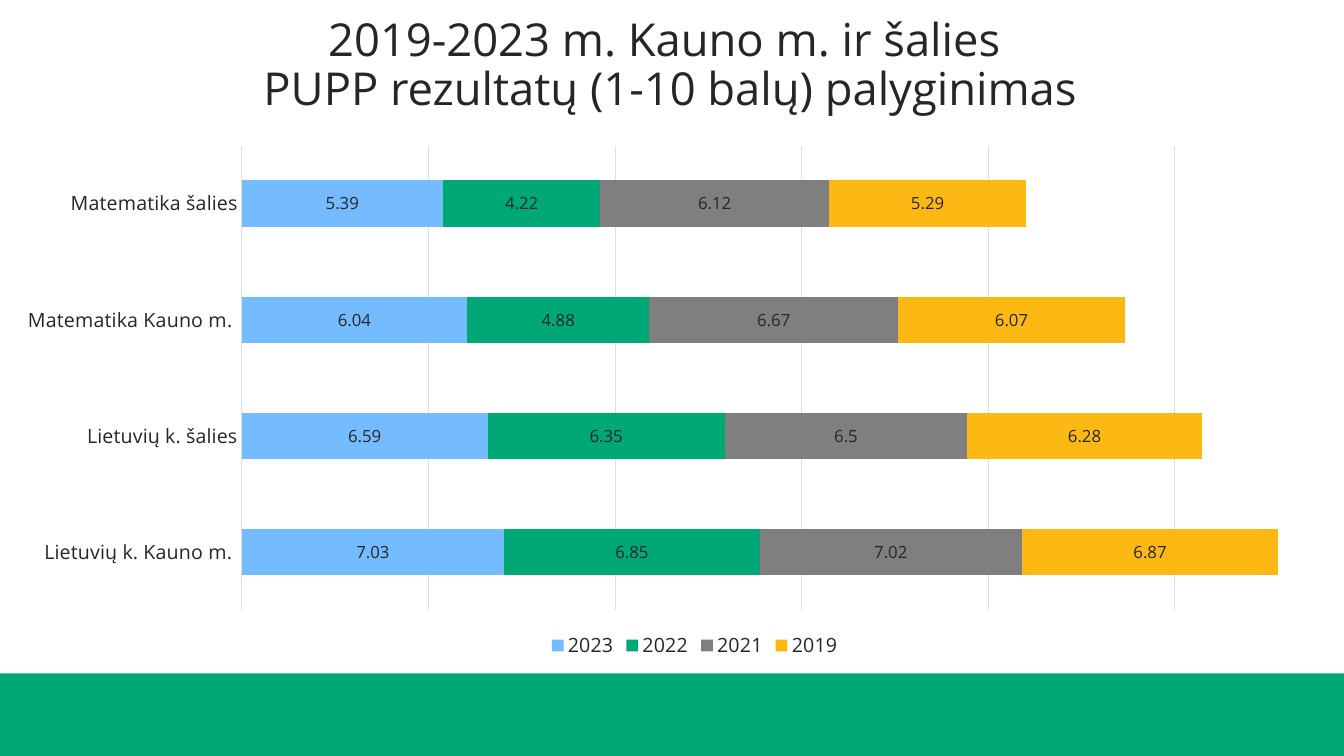
from pptx import Presentation
from pptx.chart.data import CategoryChartData
from pptx.dml.color import RGBColor
from pptx.enum.chart import XL_CHART_TYPE, XL_LABEL_POSITION, XL_LEGEND_POSITION, XL_TICK_MARK
from pptx.enum.shapes import MSO_SHAPE
from pptx.enum.text import MSO_ANCHOR, MSO_AUTO_SIZE, PP_ALIGN
from pptx.util import Inches, Pt

TITLE = "2019-2023 m. Kauno m. ir šalies \vPUPP rezultatų (1-10 balų) palyginimas"
CATEGORIES = ["Lietuvių k. Kauno m. ", "Lietuvių k. šalies", "Matematika Kauno m. ", "Matematika šalies"]
RESULTS = {
    "2023": (7.03, 6.59, 6.04, 5.39),
    "2022": (6.85, 6.35, 4.88, 4.22),
    "2021": (7.02, 6.5, 6.67, 6.12),
    "2019": (6.87, 6.28, 6.07, 5.29),
}
THEME = {
    "font": "Open Sans",
    "text": "262626",
    "grid": "DEDEDE",
    "band": "00A875",
    "years": {"2023": "75BBFF", "2022": "00A875", "2021": "7F7F7F", "2019": "FCB813"},
    "sizes": {"title": 32.4, "chart": 10, "axis": 14, "legend": 14, "label": 12},
}
SLIDE_SIZE = (13.33, 7.5)
BAND_TOP = 6.68
TITLE_BOX = (0.6, 0.3, 12.1, 0.89)
CHART_BOX = (0, 1.34, 13.78, 5.24)


def set_values(target, values):
    """Set every attribute named in a dict of format values."""
    for name, value in values.items():
        setattr(target, name, value)


def style_font(font, role):
    """Apply the theme typeface, colour and the size for a role."""
    set_values(font, {"name": THEME["font"], "size": Pt(THEME["sizes"][role]), "bold": False})
    font.color.rgb = RGBColor.from_string(THEME["text"])


def style_line(line):
    """Draw a thin grid-coloured line."""
    line.color.rgb = RGBColor.from_string(THEME["grid"])
    line.width = Pt(0.75)


def paint(fill, color):
    """Fill with one solid colour."""
    fill.solid()
    fill.fore_color.rgb = RGBColor.from_string(color)


def add_band(slide):
    """Add the green band along the bottom edge."""
    width, height = SLIDE_SIZE
    band = slide.shapes.add_shape(
        MSO_SHAPE.RECTANGLE, 0, Inches(BAND_TOP), Inches(width), Inches(height - BAND_TOP)
    )
    band.shadow.inherit = False
    paint(band.fill, THEME["band"])
    band.line.fill.background()


def add_title(slide):
    """Place and format the slide title."""
    title = slide.shapes.title
    set_values(title, dict(zip(("left", "top", "width", "height"), map(Inches, TITLE_BOX))))
    frame = title.text_frame
    set_values(frame, {
        "text": TITLE,
        "word_wrap": True,
        "auto_size": MSO_AUTO_SIZE.NONE,
        "vertical_anchor": MSO_ANCHOR.BOTTOM,
    })
    paragraph = frame.paragraphs[0]
    set_values(paragraph, {"alignment": PP_ALIGN.CENTER, "line_spacing": 0.9, "space_before": Pt(0)})
    for run in paragraph.runs:
        style_font(run.font, "title")


def add_results_chart(slide):
    """Add the stacked bars of exam results by year."""
    data = CategoryChartData()
    data.categories = CATEGORIES
    for year, values in RESULTS.items():
        data.add_series(year, values)
    chart = slide.shapes.add_chart(XL_CHART_TYPE.BAR_STACKED, *map(Inches, CHART_BOX), data).chart
    set_values(chart, {"has_title": False, "has_legend": True})
    style_font(chart.font, "chart")
    set_values(chart.legend, {"position": XL_LEGEND_POSITION.BOTTOM, "include_in_layout": False})
    style_font(chart.legend.font, "legend")

    no_ticks = {"major_tick_mark": XL_TICK_MARK.NONE, "minor_tick_mark": XL_TICK_MARK.NONE}
    set_values(chart.category_axis, {**no_ticks, "has_major_gridlines": False})
    style_font(chart.category_axis.tick_labels.font, "axis")
    style_line(chart.category_axis.format.line)
    set_values(chart.value_axis, {
        **no_ticks, "visible": False, "has_major_gridlines": True,
        "minimum_scale": 0, "maximum_scale": 30, "major_unit": 5,
    })
    style_line(chart.value_axis.major_gridlines.format.line)

    plot = chart.plots[0]
    set_values(plot, {"gap_width": 150, "overlap": 100, "vary_by_categories": False})
    for series in plot.series:
        paint(series.format.fill, THEME["years"][series.name])
        labels = series.data_labels
        set_values(labels, {"show_value": True, "position": XL_LABEL_POSITION.CENTER})
        style_font(labels.font, "label")


def main():
    """Build and save the slide."""
    presentation = Presentation()
    width, height = SLIDE_SIZE
    set_values(presentation, {"slide_width": Inches(width), "slide_height": Inches(height)})
    slide = presentation.slides.add_slide(presentation.slide_layouts[5])
    add_band(slide)
    add_title(slide)
    add_results_chart(slide)
    presentation.save("out.pptx")


if __name__ == "__main__":
    main()
